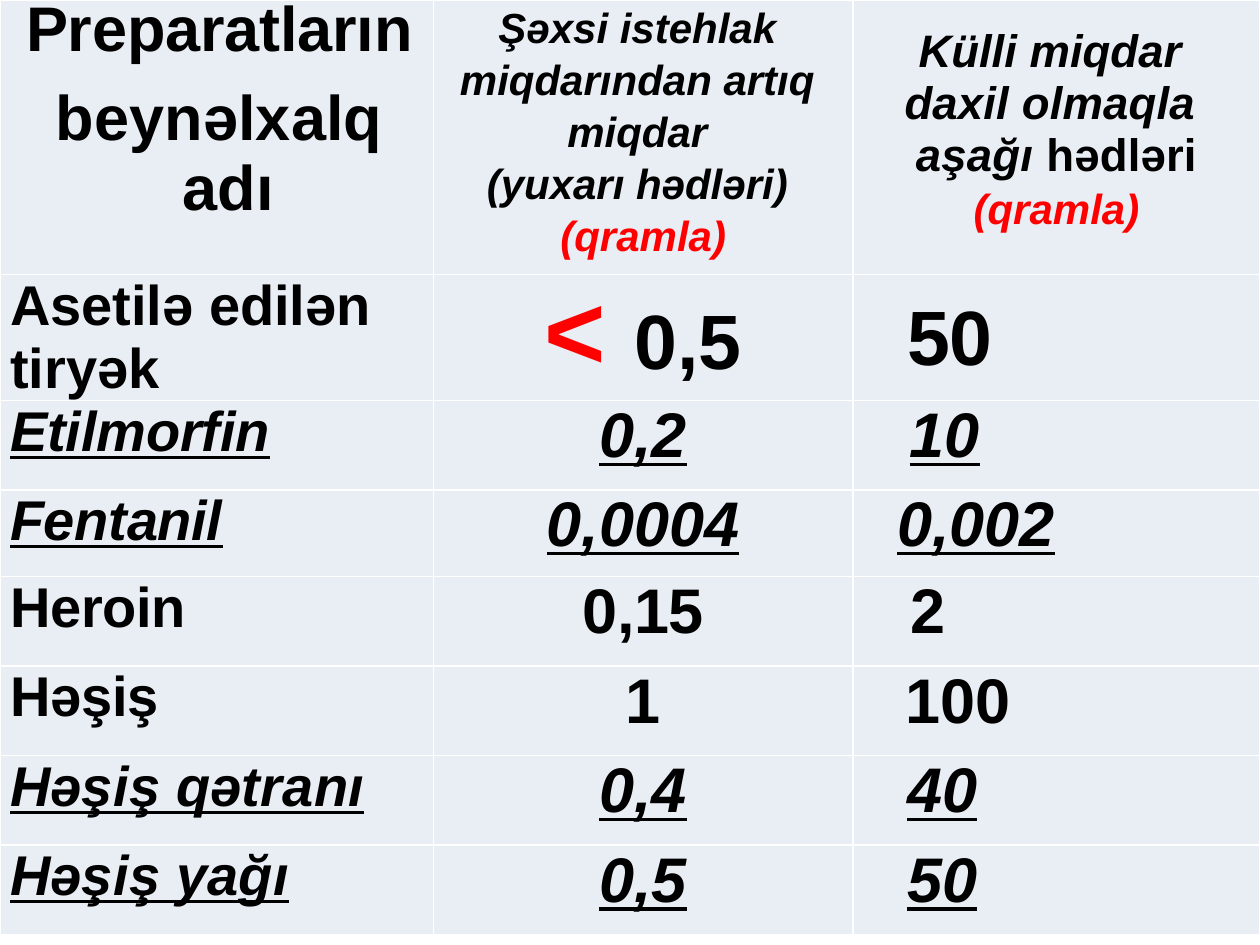
import pptx
import pptx.util
import pptx.dml.color
import pptx.enum.text
import pptx.oxml.ns
import lxml.etree

BLACK = pptx.dml.color.RGBColor(0x00, 0x00, 0x00)
RED = pptx.dml.color.RGBColor(0xFF, 0x00, 0x00)
WHITE = pptx.dml.color.RGBColor(0xFF, 0xFF, 0xFF)
PALE_BLUE = pptx.dml.color.RGBColor(0xE9, 0xED, 0xF4)

CENTER = pptx.enum.text.PP_ALIGN.CENTER
LEFT = pptx.enum.text.PP_ALIGN.LEFT
FONT = "Arial"
SIDE_MARGIN = 0.03
NAME_INDENT = 0.05
COLUMN_WIDTHS = [3.44, 3.33, 3.23]
ROW_HEIGHTS = [2.18, 0.99, 0.71, 0.69] + [0.71] * 4
PITCH = 29.7

NAME_LINES = [("Preparatların", 37.3, -0.1), ("beynəlxalq", 50.5, 0.1), (" adı", 40.4, 0.1)]
PERSONAL_LINES = ["Şəxsi istehlak ", "miqdarından artıq ", "miqdar ", "(yuxarı hədləri) "]
BULK_LINES = [("Külli miqdar ", 0), ("daxil olmaqla ", 0.1)]

DRUGS = [
    ("Etilmorfin", "0,2", "10", 0.42, True, -0.1, 0),
    ("Fentanil", "0,0004", "0,002", 0.32, True, -0.2, 0),
    ("Heroin", "0,15", "2", 0.43, False, -0.2, -0.3),
    ("Həşiş", "1", "100", 0.39, False, -0.1, 0),
    ("Həşiş qətranı", "0,4", "40", 0.4, True, 0.1, 0),
    ("Həşiş yağı", "0,5", "50", 0.4, True, 0.1, 0),
]


def add_span(para, text, size=36, color=BLACK, italic=False, underline=False, spacing=0):
    span = para.add_run()
    span.text = text
    font = span.font
    font.name = FONT
    font.size = pptx.util.Pt(size)
    font.bold = True
    font.italic = italic
    font.underline = underline
    font.color.rgb = color
    if spacing:
        span._r.get_or_add_rPr().set("spc", str(round(spacing * 100)))
    return span


def add_para(cell, align=LEFT, indent=0, pitch=None):
    frame = cell.text_frame
    first = frame.paragraphs[0]
    para = frame.add_paragraph() if first.runs else first
    para.alignment = align
    if indent:
        properties = para._p.get_or_add_pPr()
        properties.set("marL", str(pptx.util.Inches(indent)))
        properties.set("indent", "0")
    if pitch:
        para.line_spacing = pptx.util.Pt(pitch)
    return para


def style_cell(cell):
    cell.margin_left = cell.margin_right = pptx.util.Inches(SIDE_MARGIN)
    cell.margin_top = cell.margin_bottom = 0
    cell.vertical_anchor = pptx.enum.text.MSO_ANCHOR.TOP
    properties = cell._tc.get_or_add_tcPr()
    qualify = pptx.oxml.ns.qn
    for side in ("a:lnL", "a:lnR", "a:lnT", "a:lnB"):
        line = lxml.etree.SubElement(properties, qualify(side), w=str(pptx.util.Pt(1)))
        fill = lxml.etree.SubElement(line, qualify("a:solidFill"))
        lxml.etree.SubElement(fill, qualify("a:srgbClr"), val=str(WHITE))
    cell.fill.solid()
    cell.fill.fore_color.rgb = PALE_BLUE


def add_grid(slide, left, top, width, height):
    frame = slide.shapes.add_table(
        len(ROW_HEIGHTS), len(COLUMN_WIDTHS), left, top, width, height
    )
    table = frame.table
    table.first_row = False
    table.horz_banding = False
    for column, share in zip(table.columns, COLUMN_WIDTHS):
        column.width = int(width * share / sum(COLUMN_WIDTHS))
    for row, share in zip(table.rows, ROW_HEIGHTS):
        row.height = int(height * share / sum(ROW_HEIGHTS))
    for cell in table.iter_cells():
        style_cell(cell)
    return table


def fill_header(name_cell, personal_cell, bulk_cell):
    for text, pitch, spacing in NAME_LINES:
        add_span(add_para(name_cell, CENTER, 0.04, pitch), text, spacing=spacing)

    for text in PERSONAL_LINES:
        para = add_para(personal_cell, CENTER, pitch=PITCH)
        add_span(para, text, size=24, italic=True)

    bulk_cell.margin_top = pptx.util.Inches(0.2)
    for text, spacing in BULK_LINES:
        para = add_para(bulk_cell, CENTER, pitch=PITCH)
        add_span(para, text, size=26, italic=True, spacing=spacing)
    para = add_para(bulk_cell, CENTER, pitch=PITCH)
    add_span(para, "aşağı ", size=26, italic=True, spacing=0.1)
    add_span(para, "hədləri", size=26, spacing=0.1)

    for cell in (personal_cell, bulk_cell):
        para = add_para(cell, CENTER, pitch=PITCH)
        add_span(para, "(qramla)", size=24, color=RED, italic=True)


def fill_opium(name_cell, personal_cell, bulk_cell):
    add_span(add_para(name_cell, indent=NAME_INDENT), "Asetilə edilən tiryək", size=32)
    para = add_para(personal_cell, CENTER)
    add_span(para, "< ", size=60, color=RED)
    add_span(para, "0,5", size=44)
    bulk_cell.margin_top = pptx.util.Inches(0.17)
    add_span(add_para(bulk_cell, indent=0.4), "50", size=44)


def fill_drug(cells, name, personal, bulk, indent, marked, name_spacing, personal_spacing):
    name_cell, personal_cell, bulk_cell = cells
    look = {"italic": marked, "underline": marked}
    para = add_para(name_cell, indent=NAME_INDENT)
    add_span(para, name, size=32, spacing=name_spacing, **look)
    add_span(add_para(personal_cell, CENTER), personal, spacing=personal_spacing, **look)
    add_span(add_para(bulk_cell, indent=indent), bulk, **look)


def main():
    deck = pptx.Presentation()
    deck.slide_width = pptx.util.Inches(10)
    deck.slide_height = pptx.util.Inches(7.5)
    slide = deck.slides.add_slide(deck.slide_layouts[6])
    height = pptx.util.Inches(sum(ROW_HEIGHTS))
    table = add_grid(slide, 0, 0, deck.slide_width, height)
    header, opium, *drug_rows = [list(row.cells) for row in table.rows]
    fill_header(*header)
    fill_opium(*opium)
    for cells, drug in zip(drug_rows, DRUGS):
        fill_drug(cells, *drug)
    deck.save("out.pptx")


if __name__ == "__main__":
    main()
